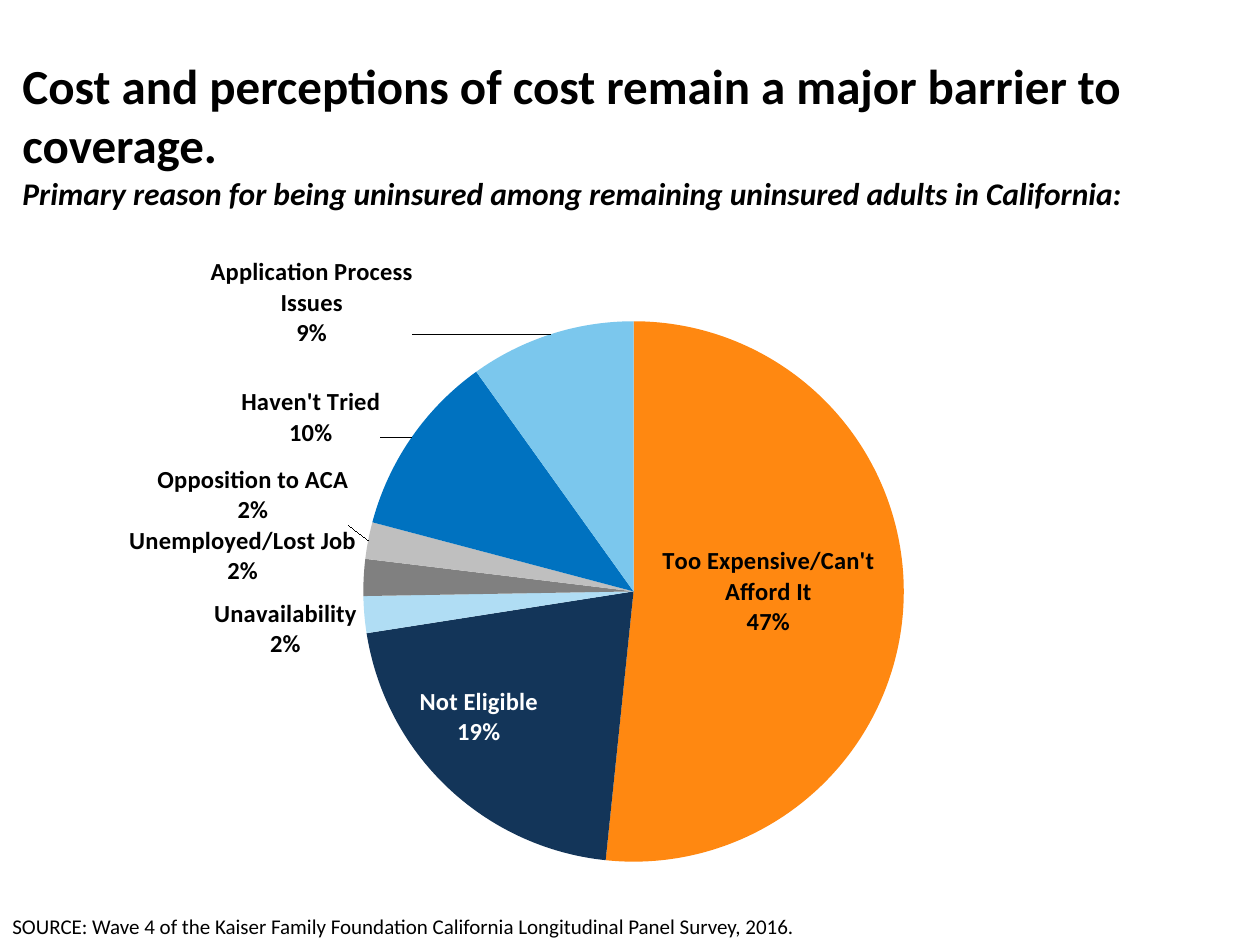
"""Build a slide with a pie chart of reasons for being uninsured."""
from lxml.etree import SubElement
from pptx import Presentation
from pptx.chart.data import CategoryChartData
from pptx.dml.color import RGBColor
from pptx.enum.chart import XL_CHART_TYPE as ChartType, XL_LABEL_POSITION as LabelPos
from pptx.enum.text import MSO_ANCHOR as Anchor
from pptx.oxml.ns import qn
from pptx.util import Inches, Pt

THEME = {
    "font": "Calibri", "black": "000000", "white": "FFFFFF",
    "title": 28, "subtitle": 18, "label": 14, "source": 12,
    "slices": ["FF8811", "133559", "B0DDF4", "808080", "BFBFBF", "0072C0", "7BC7ED"],
}


def style(font, size, color="black", bold=False, italic=False):
    font.name, font.size = THEME["font"], Pt(THEME[size])
    font.bold, font.italic = bold, italic
    font.color.rgb = RGBColor.from_string(THEME[color])


def add_layout(parent, position, **values):
    layout = parent.makeelement(qn("c:layout"), {})
    parent.insert(position, layout)
    manual = SubElement(layout, qn("c:manualLayout"))
    for tag, value in values.items():
        SubElement(manual, qn(f"c:{tag}")).set("val", str(value))


prs = Presentation()
prs.slide_width, prs.slide_height = Inches(10), Inches(7.5)
s = prs.slides.add_slide(prs.slide_layouts[6])
col, row = prs.slide_width / 100, prs.slide_height / 75

data = CategoryChartData(number_format="0%")
data.categories = [
    "Too Expensive/Can't Afford It", "Not Eligible", "Unavailability",
    "Unemployed/Lost Job", "Opposition to ACA", "Haven't Tried",
    "Application Process Issues",
]
data.add_series("Series 1", [0.47, 0.19, 0.02, 0.02, 0.02, 0.1, 0.09])
chart = s.shapes.add_chart(
    ChartType.PIE, int(0.8 * col), int(16.7 * row), int(98 * col), int(55 * row), data
).chart
chart.has_title = chart.has_legend = False
style(chart.font, "subtitle")
plot_area = chart._chartSpace.chart.plotArea
for old in plot_area.findall(qn("c:layout")):
    plot_area.remove(old)
add_layout(plot_area, 0, layoutTarget="inner", xMode="edge", yMode="edge",
           x=0.28, y=0.16, w=0.45, h=0.78)

series = chart.plots[0].series[0]
for i, color in enumerate(THEME["slices"]):
    fill = series.points[i].format.fill
    fill.solid()
    fill.fore_color.rgb = RGBColor.from_string(color)

labels = series.data_labels
labels.show_value = labels.show_category_name = True
labels.number_format, labels.number_format_is_linked = "0%", False
labels.position = LabelPos.OUTSIDE_END
style(labels.font, "label", bold=True)

placed = [
    (LabelPos.CENTER, "black", 0, -0.01),
    (LabelPos.CENTER, "white", -0.05, 0.04),
    (LabelPos.OUTSIDE_END, "black", 0, 0.02),
    (LabelPos.OUTSIDE_END, "black", 0, -0.03),
    (LabelPos.OUTSIDE_END, "black", -0.01, -0.02),
    (LabelPos.OUTSIDE_END, "black", -0.02, 0.02),
    (LabelPos.OUTSIDE_END, "black", -0.11, 0.03),
]
for i, (position, color, dx, dy) in enumerate(placed):
    label = series.points[i].data_label
    style(label.font, "label", color, bold=True)
    label.position = position

for node, (position, color, dx, dy) in zip(labels._element.findall(qn("c:dLbl")), placed):
    add_layout(node, 1, x=dx, y=dy)
    node.insert(2, node.makeelement(
        qn("c:numFmt"), {"formatCode": "0%", "sourceLinked": "0"}))
    node.find(qn("c:showCatName")).set("val", "1")

for size in list(labels._element.iter(qn("c:showBubbleSize"))):
    separator = size.makeelement(qn("c:separator"), {})
    separator.text = "\n"
    size.addnext(separator)

texts = [
    ("SOURCE: Wave 4 of the Kaiser Family Foundation California Longitudinal Panel Survey, 2016.",
     (0, 65.8, 91, 9.2), Anchor.BOTTOM, "source", False, False),
    ("Cost and perceptions of cost remain a major barrier to coverage.",
     (0.8, 4.1, 100, 10), Anchor.MIDDLE, "title", True, False),
    ("Primary reason for being uninsured among remaining uninsured adults in California:",
     (0.8, 13.3, 94.2, 4), Anchor.TOP, "subtitle", True, True),
]
for text, (x, y, w, h), anchor, size, bold, italic in texts:
    box = s.shapes.add_textbox(int(x * col), int(y * row), int(w * col), int(h * row))
    tf = box.text_frame
    tf.word_wrap, tf.vertical_anchor = True, anchor
    tf.text = text
    style(tf.paragraphs[0].runs[0].font, size, bold=bold, italic=italic)

prs.save("out.pptx")
